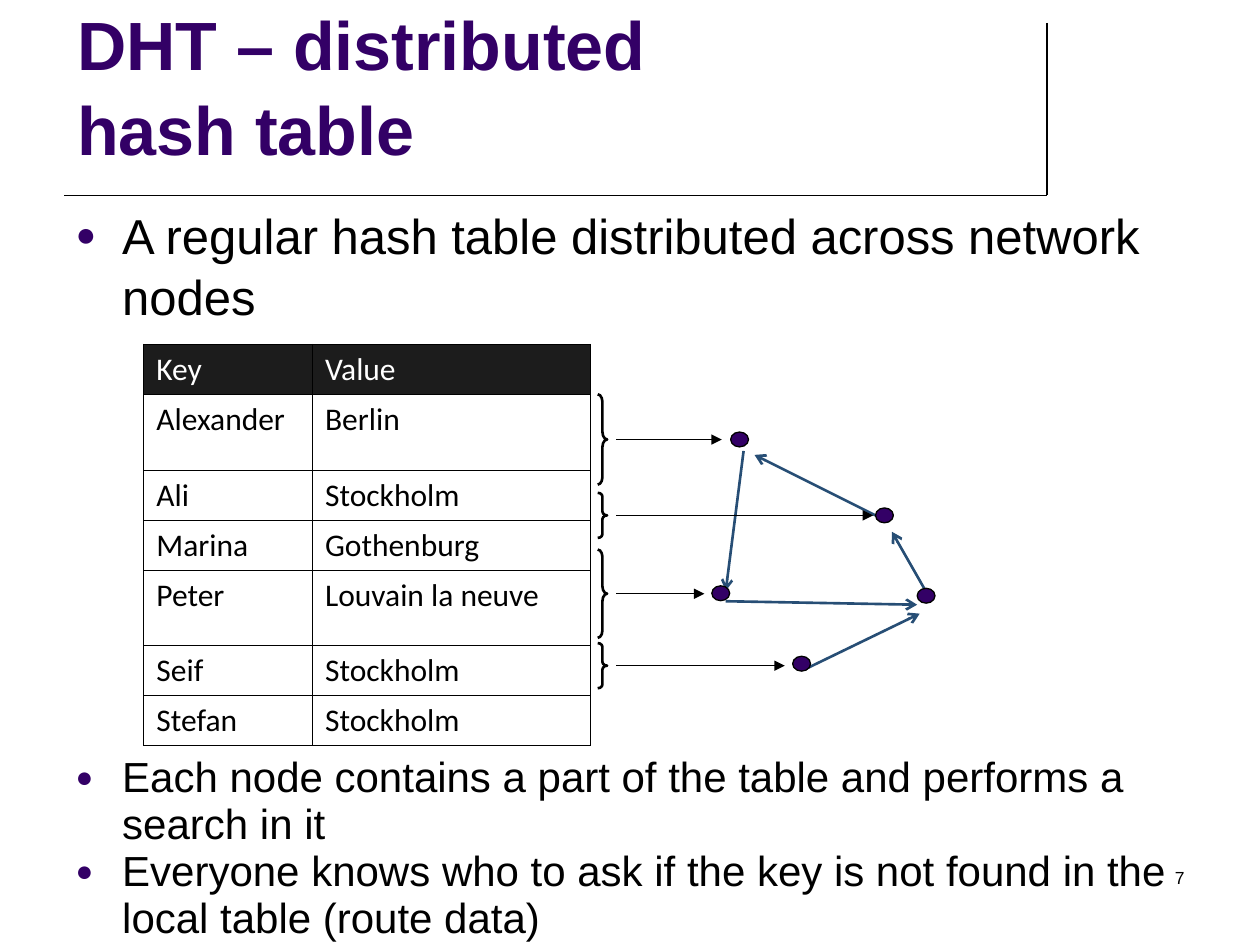
import dataclasses

import lxml.etree
import pptx
import pptx.dml.color
import pptx.enum.shapes
import pptx.enum.text
import pptx.oxml.ns
import pptx.util
from pptx.util import Cm

PURPLE, BLACK, WHITE, BLUE, HEADER = "330066", "000000", "FFFFFF", "274E75", "1C1C1C"
NODE_W, NODE_H = 0.36, 0.3
BRACE_LEFT, BRACE_W, ARROW_LEFT = 12.05, 0.19, 12.42


@dataclasses.dataclass
class Line:
    x1: float
    y1: float
    x2: float
    y2: float


@dataclasses.dataclass
class Part:
    middle: float
    height: float
    arrow_end: float


@dataclasses.dataclass
class Bullet:
    text: str
    size: float
    spacing: float
    before: float


FRAME = [Line(21.1, 0.46, 21.1, 3.94), Line(1.3, 3.94, 21.1, 3.94)]
RING = [
    Line(16.23, 13.49, 18.54, 12.37),
    Line(18.75, 12.07, 17.98, 10.72),
    Line(17.91, 10.52, 15.21, 9.17),
    Line(14.99, 9.09, 14.63, 11.91),
    Line(14.63, 12.12, 18.49, 12.19),
]
PARTS = [
    Part(8.86, 1.82, 14.55),
    Part(10.39, 0.91, 17.6),
    Part(11.97, 1.78, 14.2),
    Part(13.42, 0.91, 15.82),
]
NODES = [(14.35, 11.81), (14.73, 8.71), (15.98, 13.23), (17.65, 10.24), (18.49, 11.86)]
BULLETS = [
    Bullet("A regular hash table distributed across network nodes", 28, 1.03, 0),
    Bullet("Each node contains a part of the table and performs a search in it", 24, 0.93, 246),
    Bullet("Everyone knows who to ask if the key is not found in the local table (route data)",
           24, 0.93, 0),
]
ROWS = [
    ("Key", "Value"),
    ("Alexander", "Berlin"),
    ("Ali", "Stockholm"),
    ("Marina", "Gothenburg"),
    ("Peter", "Louvain la neuve"),
    ("Seif", "Stockholm"),
    ("Stefan", "Stockholm"),
]
TALL_ROWS = ("Alexander", "Peter")
COLUMN_WIDTHS = (3.4, 5.6)


def rgb(value: str):
    return pptx.dml.color.RGBColor.from_string(value)


def add_xml(parent, tag: str, **attributes: str):
    return lxml.etree.SubElement(parent, pptx.oxml.ns.qn(tag), attributes)


def style(p, name: str, size: float, color: str, bold: bool = False) -> None:
    for r in p.runs:
        r.font.name = name
        r.font.size = pptx.util.Pt(size)
        r.font.bold = bold
        r.font.color.rgb = rgb(color)


def place(sp, left: float, top: float, width: float, height: float) -> None:
    sp.left, sp.top, sp.width, sp.height = Cm(left), Cm(top), Cm(width), Cm(height)


def draw_line(s, line: Line, color: str, width: float, head: str = "") -> None:
    sp = s.shapes.add_connector(
        pptx.enum.shapes.MSO_CONNECTOR.STRAIGHT,
        Cm(line.x1), Cm(line.y1), Cm(line.x2), Cm(line.y2))
    sp.line.color.rgb = rgb(color)
    sp.line.width = pptx.util.Pt(width)
    if head:
        add_xml(sp.line._get_or_add_ln(), "a:tailEnd", type=head)
    add_xml(sp._element.spPr, "a:effectLst")


def draw_title(s) -> None:
    sp = s.shapes.title
    place(sp, 1.3, 0.33, 19.8, 3.2)
    tf = sp.text_frame
    tf.text = "DHT – distributed\vhash table"
    tf.vertical_anchor = pptx.enum.text.MSO_ANCHOR.BOTTOM
    tf.auto_size = pptx.enum.text.MSO_AUTO_SIZE.NONE
    p = tf.paragraphs[0]
    p.alignment = pptx.enum.text.PP_ALIGN.LEFT
    p.line_spacing = 1.03
    style(p, "Arial", 39, PURPLE, True)


def draw_bullets(s) -> None:
    sp = s.placeholders[1]
    place(sp, 1.27, 3.98, 22.86, 15.07)
    tf = sp.text_frame
    tf.auto_size = pptx.enum.text.MSO_AUTO_SIZE.NONE
    for i, bullet in enumerate(BULLETS):
        p = tf.add_paragraph() if i else tf.paragraphs[0]
        p.text = bullet.text
        p.line_spacing = bullet.spacing
        p.space_before = pptx.util.Pt(bullet.before)
        pPr = p._p.get_or_add_pPr()
        pPr.set("marL", str(Cm(0.94)))
        pPr.set("indent", str(-Cm(0.94)))
        add_xml(add_xml(pPr, "a:buClr"), "a:srgbClr", val=PURPLE)
        add_xml(pPr, "a:buSzPct", val="70000")
        add_xml(pPr, "a:buFont", typeface="Arial")
        add_xml(pPr, "a:buChar", char="●")
        style(p, "Arial", bullet.size, BLACK)


def draw_borders(cell, outer: dict[str, bool]) -> None:
    tcPr = cell._tc.get_or_add_tcPr()
    for side, is_outer in outer.items():
        width = pptx.util.Pt(0.5 if is_outer else 0.25)
        ln = add_xml(tcPr, f"a:ln{side}", w=str(width))
        add_xml(add_xml(ln, "a:solidFill"), "a:srgbClr", val=BLACK)


def draw_table(s) -> None:
    heights = [1.52 if row[0] in TALL_ROWS else 1.01 for row in ROWS]
    table = s.shapes.add_table(
        len(ROWS), len(COLUMN_WIDTHS), Cm(2.9), Cm(6.94),
        Cm(sum(COLUMN_WIDTHS)), Cm(sum(heights))).table
    table.horz_banding = False
    for column, width in zip(table.columns, COLUMN_WIDTHS):
        column.width = Cm(width)
    for i, row in enumerate(ROWS):
        table.rows[i].height = Cm(heights[i])
        for j, text in enumerate(row):
            cell = table.cell(i, j)
            draw_borders(cell, {"L": j == 0, "R": j == len(row) - 1,
                                "T": i == 0, "B": i == len(ROWS) - 1})
            if i == 0:
                cell.fill.solid()
                cell.fill.fore_color.rgb = rgb(HEADER)
            else:
                cell.fill.background()
            cell.text_frame.text = text
            p = cell.text_frame.paragraphs[0]
            p.line_spacing = 0.98
            style(p, "Calibri", 18, BLACK if i else WHITE)


def draw_part(s, part: Part) -> None:
    sp = s.shapes.add_shape(
        pptx.enum.shapes.MSO_SHAPE.RIGHT_BRACE, Cm(BRACE_LEFT),
        Cm(part.middle - part.height / 2), Cm(BRACE_W), Cm(part.height))
    sp.adjustments[0] = part.height / 12 / BRACE_W
    sp.shadow.inherit = False
    sp.fill.background()
    sp.line.color.rgb = rgb(BLACK)
    sp.line.width = pptx.util.Pt(1.5)
    draw_line(s, Line(ARROW_LEFT, part.middle, part.arrow_end, part.middle),
              BLACK, 0.75, "triangle")


def draw_node(s, left: float, top: float) -> None:
    sp = s.shapes.add_shape(
        pptx.enum.shapes.MSO_SHAPE.OVAL, Cm(left), Cm(top), Cm(NODE_W), Cm(NODE_H))
    sp.shadow.inherit = False
    sp.fill.solid()
    sp.fill.fore_color.rgb = rgb(PURPLE)
    sp.line.color.rgb = rgb(BLACK)
    sp.line.width = pptx.util.Pt(0.75)


def draw_page_number(s) -> None:
    tf = s.shapes.add_textbox(Cm(18.2), Cm(17.35), Cm(5.93), Cm(1.27)).text_frame
    tf.word_wrap = True
    tf.text = "7"
    p = tf.paragraphs[0]
    p.alignment = pptx.enum.text.PP_ALIGN.RIGHT
    style(p, "Arial", 10, BLACK)


def main() -> None:
    prs = pptx.Presentation()
    prs.slide_width, prs.slide_height = Cm(25.4), Cm(19.05)
    s = prs.slides.add_slide(prs.slide_layouts[1])
    for line in FRAME:
        draw_line(s, line, BLACK, 1)
    draw_title(s)
    draw_bullets(s)
    draw_page_number(s)
    draw_table(s)
    for line in RING:
        draw_line(s, line, BLUE, 1.5, "arrow")
    for part in PARTS:
        draw_part(s, part)
    for left, top in NODES:
        draw_node(s, left, top)
    prs.save("out.pptx")


if __name__ == "__main__":
    main()
